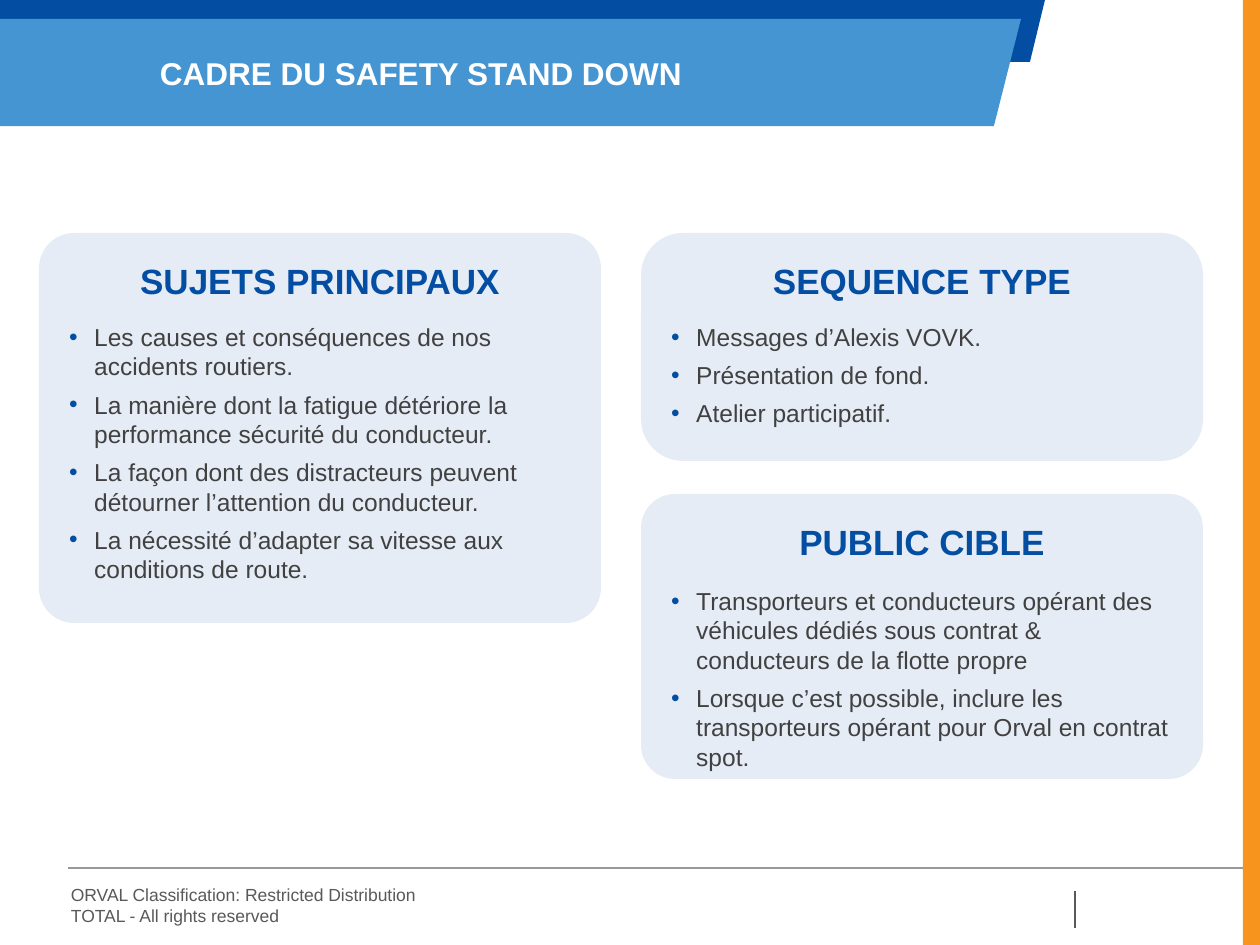
from lxml import etree
from pptx import Presentation
from pptx import util as u
from pptx.dml.color import RGBColor
from pptx.enum import shapes, text
from pptx.oxml.ns import qn

PX = u.Inches(1) / 126
NAVY = RGBColor(0x03, 0x4E, 0xA2)
BLUE = RGBColor(0x44, 0x95, 0xD1)
ORANGE = RGBColor(0xF7, 0x94, 0x1D)
WHITE = RGBColor(0xFF, 0xFF, 0xFF)
DARK = RGBColor(0x41, 0x41, 0x41)
GREY = RGBColor(0x59, 0x59, 0x59)
RULE = RGBColor(0x99, 0x99, 0x99)

# Content
TITLE = "CADRE DU SAFETY STAND DOWN"
FOOTER = [
    "ORVAL Classification: Restricted Distribution",
    "TOTAL - All rights reserved",
]
# Each card: heading, (left, top, width, height), corner radius, list offset, items
CARDS = [
    ("SUJETS PRINCIPAUX", (39, 233, 562, 390), 35, 83, [
        "Les causes et conséquences de nos accidents routiers.",
        "La manière dont la fatigue détériore la performance sécurité du conducteur.",
        "La façon dont des distracteurs peuvent détourner l’attention du conducteur.",
        "La nécessité d’adapter sa vitesse aux conditions de route.",
    ]),
    ("SEQUENCE TYPE", (641, 233, 562, 228), 42, 83, [
        "Messages d’Alexis VOVK.",
        "Présentation de fond.",
        "Atelier participatif.",
    ]),
    ("PUBLIC CIBLE", (641, 494, 562, 285), 34, 86, [
        "Transporteurs et conducteurs opérant des véhicules dédiés sous contrat & "
        "conducteurs de la flotte propre",
        "Lorsque c’est possible, inclure les transporteurs opérant pour Orval en "
        "contrat spot.",
    ]),
]
BANDS = [
    (NAVY, [(0, 0), (1045, 0), (1030, 62), (0, 62)]),
    (BLUE, [(0, 19), (1021, 19), (994, 126), (0, 126)]),
]
RULES = [(RULE, (68, 868, 1243, 868)), (GREY, (1075, 891, 1075, 928))]


def px(*lengths):
    return [u.Emu(round(length * PX)) for length in lengths]


def paint(shape, color):
    shape.shadow.inherit = False
    shape.fill.solid()
    shape.fill.fore_color.rgb = color
    shape.line.fill.background()


def place(shape, left, top, width, height):
    shape.left, shape.top, shape.width, shape.height = px(left, top, width, height)


def write(shape, lines, size, color, bold=False, align=text.PP_ALIGN.LEFT,
          anchor=text.MSO_ANCHOR.TOP, insets=(13, 6)):
    frame = shape.text_frame
    frame.word_wrap = True
    frame.auto_size = text.MSO_AUTO_SIZE.NONE
    frame.vertical_anchor = anchor
    frame.margin_left = frame.margin_right = px(insets[0])[0]
    frame.margin_top = frame.margin_bottom = px(insets[1])[0]
    frame.text = "\n".join(lines)
    for paragraph in frame.paragraphs:
        paragraph.alignment = align
        paragraph.line_spacing = 1.0
        paragraph.space_before = u.Pt(0)
        font = paragraph.font
        font.name, font.size, font.bold = "Arial", u.Pt(size), bold
        font.color.rgb = color


def add_bullet(paragraph):
    properties = paragraph._p.get_or_add_pPr()
    properties.set("marL", str(u.Inches(0.2)))
    properties.set("indent", str(-u.Inches(0.2)))
    color = etree.Element(qn("a:buClr"))
    etree.SubElement(color, qn("a:srgbClr"), val=str(NAVY))
    font = etree.Element(qn("a:buFont"), typeface="Arial")
    bullet = etree.Element(qn("a:buChar"), char="•")
    defaults = properties.find(qn("a:defRPr"))
    for element in (color, font, bullet):
        defaults.addprevious(element)


presentation = Presentation()
presentation.slide_width, presentation.slide_height = px(1260, 945)
slide = presentation.slides.add_slide(presentation.slide_layouts[4])
title, *bodies = slide.placeholders
tree = slide.shapes._spTree

# Side stripe, rules and footer
stripe = slide.shapes.add_shape(shapes.MSO_SHAPE.RECTANGLE, *px(1243, 0, 17, 945))
paint(stripe, ORANGE)
for color, ends in RULES:
    rule = slide.shapes.add_connector(shapes.MSO_CONNECTOR.STRAIGHT, *px(*ends))
    rule.line.color.rgb = color
    rule.line.width = u.Pt(0.75)
    etree.SubElement(rule._element.spPr, qn("a:effectLst"))
footer = slide.shapes.add_textbox(*px(58, 878, 679, 56))
write(footer, FOOTER, 10, GREY)

# Header bands and title
for color, points in BANDS:
    builder = slide.shapes.build_freeform(*points[0], scale=PX)
    builder.add_line_segments(points[1:], close=True)
    paint(builder.convert_to_shape(), color)
place(title, 160, 54, 756, 38)
write(title, [TITLE], 18, WHITE, bold=True, anchor=text.MSO_ANCHOR.MIDDLE, insets=(0, 0))
tree.append(title._element)

# Cards, each with a heading and a bulleted list
for (heading, box, radius, offset, items), body in zip(CARDS, bodies):
    left, top, width, height = box
    card = slide.shapes.add_shape(shapes.MSO_SHAPE.ROUNDED_RECTANGLE, *px(*box))
    card.adjustments[0] = radius / height
    paint(card, NAVY)
    tint = card._element.spPr.find(qn("a:solidFill"))[0]
    etree.SubElement(tint, qn("a:alpha"), val="10000")

    label = slide.shapes.add_textbox(*px(left, top + 21, width, 53))
    write(label, [heading], 20, NAVY, bold=True, align=text.PP_ALIGN.CENTER,
          anchor=text.MSO_ANCHOR.MIDDLE)

    place(body, left, top + offset, width, height - offset)
    write(body, items, 14, DARK, insets=(30, 6))
    for index, paragraph in enumerate(body.text_frame.paragraphs):
        paragraph.space_before = u.Pt(5 if index else 0)
        add_bullet(paragraph)
    tree.append(body._element)

# Unused placeholder
for body in bodies[len(CARDS):]:
    tree.remove(body._element)

presentation.save("out.pptx")
